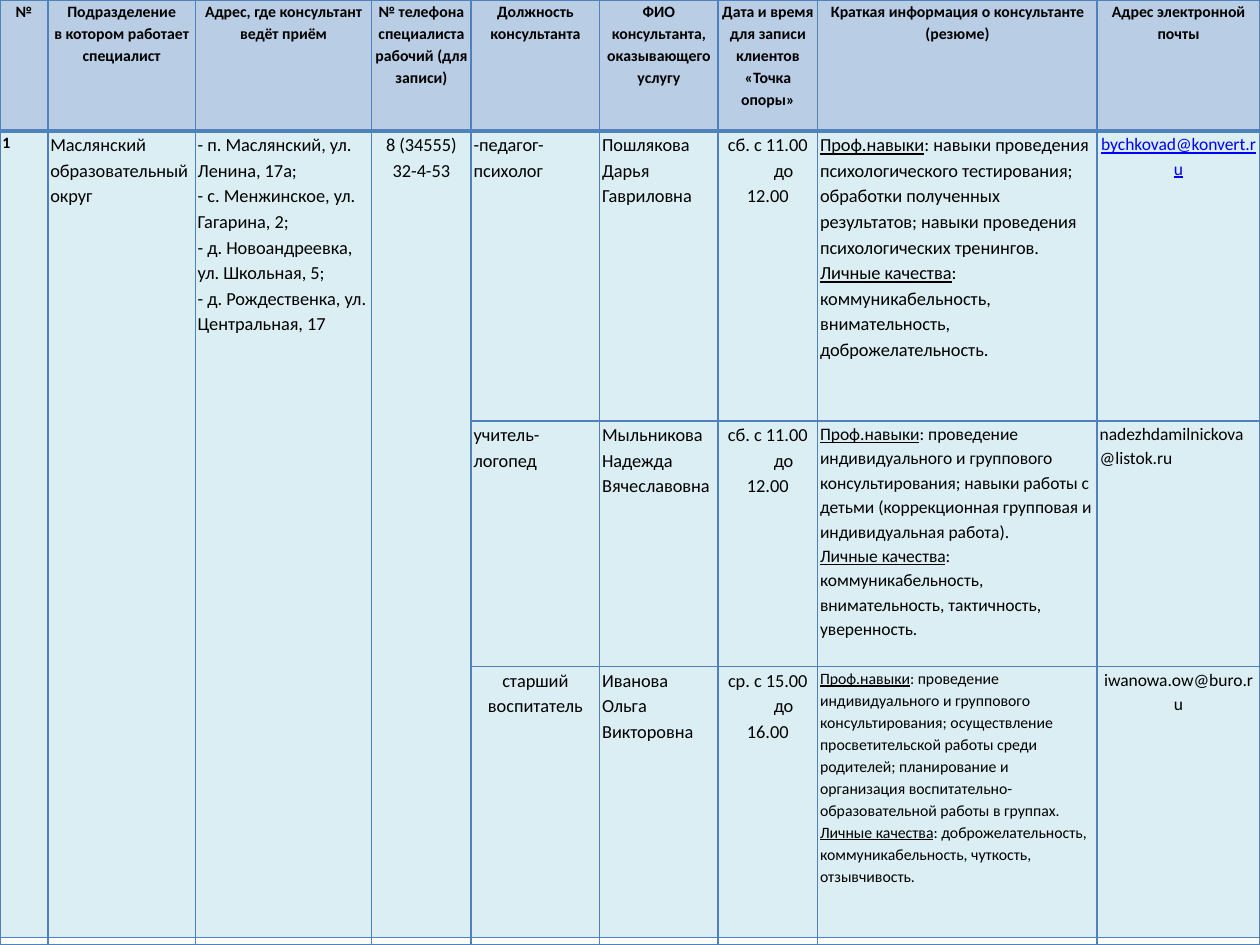
from dataclasses import dataclass

from lxml.etree import SubElement
from pptx import Presentation
from pptx.dml.color import RGBColor
from pptx.enum.text import PP_ALIGN as Align
from pptx.oxml.ns import qn
from pptx.table import _Cell as TableCell
from pptx.util import Inches, Pt

COLOURS = {
    "border": "4F81BD",
    "header": "B9CDE5",
    "body": "DBEEF4",
    "text": "000000",
    "link": "0000FF",
}
COLUMN_WIDTHS = (0.38, 1.17, 1.4, 0.79, 1.02, 0.94, 0.79, 2.22, 1.29)
ROW_HEIGHTS = (1.04, 2.3, 1.95, 2.15, 0.06)
MERGED_COLUMNS = 4
LAST_CONSULTANT_ROW = 3


@dataclass(frozen=True)
class Line:
    text: str
    lead: str = ""
    indent: float = 0


@dataclass(frozen=True)
class Entry:
    lines: tuple[Line, ...]
    size: float = 10.5
    bold: bool = False
    align: Align = Align.LEFT
    colour: str = "text"


def entry(*texts: str, **style) -> Entry:
    """Make an entry with one paragraph per text."""
    return Entry(tuple(Line(text) for text in texts), **style)


def centred(*texts: str, size: float = 10.5) -> Entry:
    """Make a centred entry."""
    return entry(*texts, size=size, align=Align.CENTER)


def hours(start: str, end: str) -> Entry:
    """Make an entry for the booking hours."""
    lines = (Line(start), Line("до", indent=0.25), Line(end))
    return Entry(lines, align=Align.CENTER)


def resume(skills: str, qualities: str, size: float) -> Entry:
    """Make an entry with underlined leads for skills and qualities."""
    lines = (
        Line(f": {skills}", "Проф.навыки"),
        Line(f": {qualities}", "Личные качества"),
    )
    return Entry(lines, size=size)


HEADERS = (
    ("№",),
    ("Подразделение", "в котором работает специалист"),
    ("Адрес, где консультант ведёт приём",),
    ("№ телефона специалиста", "рабочий (для записи)"),
    ("Должность", "консультанта"),
    ("ФИО консультанта,", "оказывающего услугу"),
    ("Дата и время для записи клиентов", "«Точка опоры»"),
    ("Краткая информация о консультанте (резюме)",),
    ("Адрес электронной почты",),
)
DEPARTMENT = (
    entry("1", size=9, bold=True),
    entry("Маслянский образовательный округ"),
    entry(
        "- п. Маслянский, ул. Ленина, 17а;",
        "- с. Менжинское, ул. Гагарина, 2;",
        "- д. Новоандреевка, ул. Школьная, 5;",
        "- д. Рождественка, ул. Центральная, 17",
    ),
    centred("8 (34555)", "32-4-53"),
)
CONSULTANTS = (
    (
        entry("-педагог-психолог"),
        entry("Пошлякова Дарья Гавриловна"),
        hours("сб. с 11.00", "12.00"),
        resume(
            "навыки проведения психологического тестирования; обработки полученных "
            "результатов; навыки проведения психологических тренингов.",
            "коммуникабельность, внимательность, доброжелательность.",
            10.5,
        ),
        Entry((Line("", "bychkovad@konvert.ru"),), 10, align=Align.CENTER, colour="link"),
    ),
    (
        entry("учитель-логопед"),
        entry("Мыльникова Надежда Вячеславовна"),
        hours("сб. с 11.00", "12.00"),
        resume(
            "проведение индивидуального и группового консультирования; навыки работы "
            "с детьми (коррекционная групповая и индивидуальная работа).",
            "коммуникабельность, внимательность, тактичность, уверенность.",
            10,
        ),
        entry("nadezhdamilnickova@listok.ru", size=10),
    ),
    (
        centred("старший воспитатель"),
        entry("Иванова Ольга Викторовна"),
        hours("ср. с 15.00", "16.00"),
        resume(
            "проведение индивидуального и группового консультирования; осуществление "
            "просветительской работы среди родителей; планирование и организация "
            "воспитательно-образовательной работы в группах.",
            "доброжелательность, коммуникабельность, чуткость, отзывчивость.",
            9,
        ),
        centred("iwanowa.ow@buro.ru", size=10),
    ),
)


def style_cell(cell: TableCell, row: int) -> None:
    """Set the margins, borders and fill of a cell by its row."""
    cell.margin_left = cell.margin_right = Inches(0.02)
    cell.margin_top = cell.margin_bottom = 0
    properties = cell._tc.get_or_add_tcPr()
    for side in "LRTB":
        heavy = (row, side) in ((0, "B"), (1, "T"))
        border = SubElement(properties, qn(f"a:ln{side}"), w=str(Pt(2 if heavy else 1)))
        fill = SubElement(border, qn("a:solidFill"))
        SubElement(fill, qn("a:srgbClr"), val=COLOURS["border"])
    if row > LAST_CONSULTANT_ROW:
        cell.fill.background()
        para = cell.text_frame.paragraphs[0]
        SubElement(para._p, qn("a:endParaRPr"), sz="100")
    else:
        cell.fill.solid()
        name = "body" if row else "header"
        cell.fill.fore_color.rgb = RGBColor.from_string(COLOURS[name])


def write_entry(cell: TableCell, content: Entry) -> None:
    """Write the paragraphs of an entry into a cell."""
    frame = cell.text_frame
    for index, line in enumerate(content.lines):
        para = frame.add_paragraph() if index else frame.paragraphs[0]
        para.alignment = content.align
        para.line_spacing = 1.15
        if line.indent:
            para._p.get_or_add_pPr().set("marL", str(Inches(line.indent)))
        for text, underlined in ((line.lead, True), (line.text, False)):
            if text:
                span = para.add_run()
                span.text = text
                span.font.name = "Calibri"
                span.font.size = Pt(content.size)
                span.font.bold = content.bold
                span.font.underline = underlined
                span.font.color.rgb = RGBColor.from_string(COLOURS[content.colour])


def main() -> None:
    """Build the consultant schedule."""
    deck = Presentation()
    deck.slide_width, deck.slide_height = Inches(10), Inches(7.5)
    page = deck.slides.add_slide(deck.slide_layouts[6])
    table = page.shapes.add_table(
        len(ROW_HEIGHTS), len(COLUMN_WIDTHS), 0, 0, Inches(10), Inches(7.5)
    ).table
    table.horz_banding = False
    for column, width in zip(table.columns, COLUMN_WIDTHS):
        column.width = Inches(width)
    for row, height in enumerate(ROW_HEIGHTS):
        table.rows[row].height = Inches(height)
        for column in range(len(COLUMN_WIDTHS)):
            style_cell(table.cell(row, column), row)
    for column in range(MERGED_COLUMNS):
        table.cell(1, column).merge(table.cell(LAST_CONSULTANT_ROW, column))
    for column, texts in enumerate(HEADERS):
        heading = entry(*texts, size=9, bold=True, align=Align.CENTER)
        write_entry(table.cell(0, column), heading)
    for column, content in enumerate(DEPARTMENT):
        write_entry(table.cell(1, column), content)
    for row, consultant in enumerate(CONSULTANTS, start=1):
        for column, content in enumerate(consultant, start=MERGED_COLUMNS):
            write_entry(table.cell(row, column), content)
    deck.save("out.pptx")


if __name__ == "__main__":
    main()
